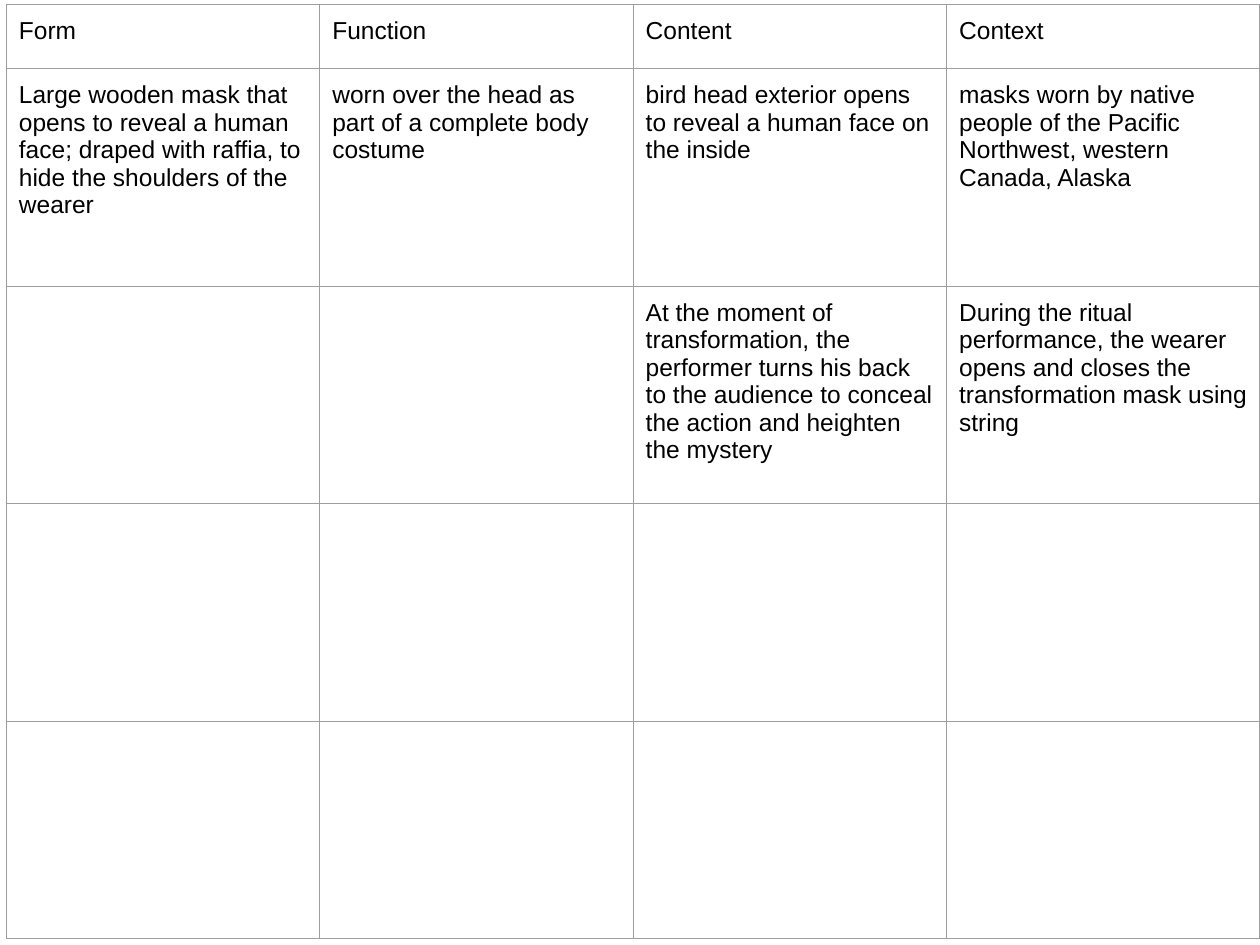
"""Build a slide with a form, function, content and context table for a mask."""
from dataclasses import dataclass

from lxml import etree
from pptx import Presentation, util as u
from pptx.dml import color
from pptx.oxml import ns


@dataclass
class Row:
    height: float
    texts: tuple[str, ...] = ("", "", "", "")


HEAD_H, BODY_H = 36.6, 124.3
COL_W = 179.1
INSET = 7.2
ROWS = [
    Row(HEAD_H, ("Form", "Function", "Content", "Context")),
    Row(BODY_H, (
        "Large wooden mask that opens to reveal a human face; draped with raffia, "
        "to hide the shoulders of the wearer",
        "worn over the head as part of a complete body costume",
        "bird head exterior opens to reveal a human face on the inside",
        "masks worn by native people of the Pacific Northwest, western Canada, Alaska",
    )),
    Row(BODY_H, (
        "",
        "",
        "At the moment of transformation, the performer turns his back to the "
        "audience to conceal the action and heighten the mystery",
        "During the ritual performance, the wearer opens and closes the "
        "transformation mask using string",
    )),
    Row(BODY_H),
    Row(BODY_H),
]


def rgb(value: str) -> color.RGBColor:
    return color.RGBColor.from_string(value)


def add_borders(cell, line: str, width: float) -> None:
    tc_pr = cell._tc.get_or_add_tcPr()
    for i, side in enumerate(("lnL", "lnR", "lnT", "lnB")):
        ln = etree.Element(ns.qn(f"a:{side}"), w=str(u.Pt(width)))
        fill = etree.SubElement(ln, ns.qn("a:solidFill"))
        etree.SubElement(fill, ns.qn("a:srgbClr"), val=line)
        tc_pr.insert(i, ln)


def fill_cell(cell, content: str) -> None:
    cell.margin_left = cell.margin_right = u.Pt(INSET)
    cell.margin_top = cell.margin_bottom = u.Pt(INSET)
    cell.fill.background()
    add_borders(cell, "9E9E9E", 0.75)
    cell.text = content
    p = cell.text_frame.paragraphs[0]
    p.font.name = "Arial"
    p.font.size = u.Pt(14)
    p.font.color.rgb = rgb("000000")


def add_grid(s, left: float, top: float, rows: list[Row]) -> None:
    n = len(rows[0].texts)
    height = sum(row.height for row in rows)
    table = s.shapes.add_table(
        len(rows), n, u.Pt(left), u.Pt(top), u.Pt(COL_W * n), u.Pt(height)
    ).table
    table.first_row = table.horz_banding = False
    for col in table.columns:
        col.width = u.Pt(COL_W)
    for i, row in enumerate(rows):
        table.rows[i].height = u.Pt(row.height)
        for j, content in enumerate(row.texts):
            fill_cell(table.cell(i, j), content)


def main() -> None:
    prs = Presentation()
    prs.slide_width, prs.slide_height = u.Pt(720), u.Pt(540)
    s = prs.slides.add_slide(prs.slide_layouts[6])
    add_grid(s, 3.6, 2.7, ROWS)
    prs.save("out.pptx")


if __name__ == "__main__":
    main()
